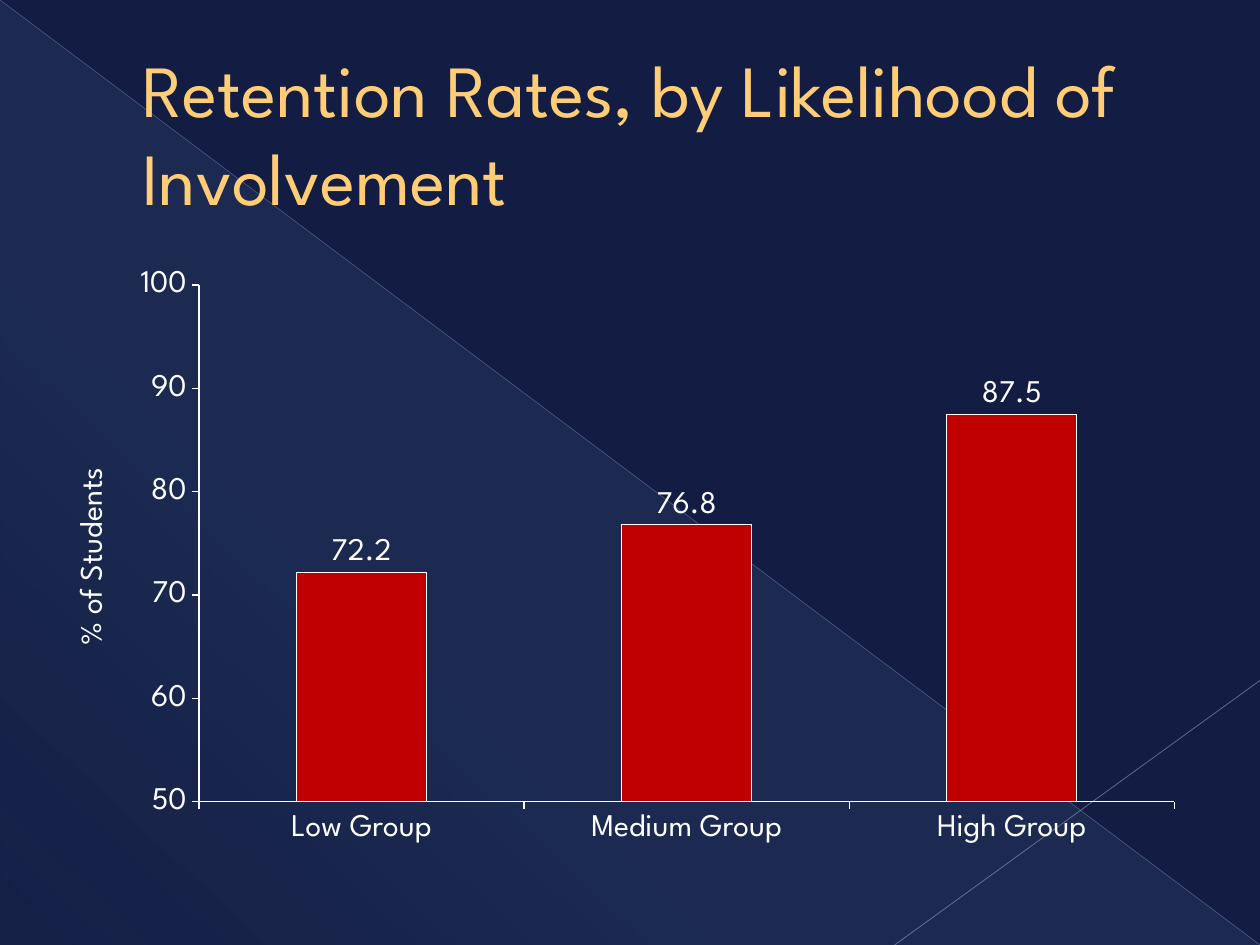
import pptx
import pptx.chart.data
import pptx.dml.color
import pptx.enum.chart
import pptx.enum.shapes
import pptx.enum.text
import pptx.oxml
import pptx.oxml.ns
import pptx.util
from dataclasses import dataclass


@dataclass(frozen=True)
class Theme:
    font: str = "League Spartan"
    background: str = "131D43"
    glow: str = "76B6F2"
    title: str = "FFCD75"
    text: str = "FFFFFF"
    bar: str = "C00000"
    title_size: int = 42
    chart_size: int = 18


theme = Theme()
namespace = pptx.oxml.ns.nsdecls("a", "c")
rgb = pptx.dml.color.RGBColor.from_string

deck = pptx.Presentation()
deck.slide_width = pptx.util.Inches(10)
deck.slide_height = pptx.util.Inches(7.5)
page = deck.slides.add_slide(deck.slide_layouts[6])
page.background.fill.solid()
page.background.fill.fore_color.rgb = rgb(theme.background)


def place(*shares):
    """Turn alternating shares of slide width and height into lengths."""
    sides = (deck.slide_width, deck.slide_height) * 2
    return [round(share * side) for share, side in zip(shares, sides)]


def write(frame, text, size, color, indent=0):
    para = frame.paragraphs[0]
    para._p.get_or_add_pPr().set("marL", str(pptx.util.Inches(indent)))
    span = para.add_run()
    span.text = text
    span.font.name = theme.font
    span.font.size = pptx.util.Pt(size)
    span.font.bold = False
    span.font.color.rgb = rgb(color)


# Background: a faint triangle and two thin diagonals
triangle = page.shapes.add_shape(
    pptx.enum.shapes.MSO_SHAPE.RIGHT_TRIANGLE, *place(0, 0, 1, 1))
triangle.shadow.inherit = False
triangle.line.fill.background()
triangle.fill.background()
stops = "".join(
    f'<a:gs pos="{position * 1000}"><a:srgbClr val="{theme.glow}">'
    f'<a:alpha val="{alpha * 1000}"/></a:srgbClr></a:gs>'
    for position, alpha in ((0, 10), (70, 8), (100, 1)))
gradient = pptx.oxml.parse_xml(
    f'<a:gradFill {namespace} rotWithShape="1"><a:gsLst>{stops}</a:gsLst>'
    f'<a:lin ang="{133 * 60000}" scaled="0"/></a:gradFill>')
no_fill = triangle._element.spPr.find(pptx.oxml.ns.qn("a:noFill"))
no_fill.getparent().replace(no_fill, gradient)

diagonals = (
    ((0, 0, 1, 1), "ACB0D2", 0.39, 35),
    ((1, 0.72, 0.71, 1), "B5B9D7", 0.47, 45),
)
for ends, color, width, alpha in diagonals:
    diagonal = page.shapes.add_connector(
        pptx.enum.shapes.MSO_CONNECTOR.STRAIGHT, *place(*ends))
    diagonal.line.width = pptx.util.Pt(width)
    diagonal.line.color.rgb = rgb(color)
    tint = diagonal._element.spPr.find(".//" + pptx.oxml.ns.qn("a:srgbClr"))
    tint.append(pptx.oxml.parse_xml(f'<a:alpha {namespace} val="{alpha * 1000}"/>'))
    diagonal._element.spPr.append(pptx.oxml.parse_xml(f"<a:effectLst {namespace}/>"))

# Title
title = page.shapes.add_textbox(*place(0.05, 0.04, 0.9, 0.2)).text_frame
title.word_wrap = True
title.vertical_anchor = pptx.enum.text.MSO_ANCHOR.MIDDLE
write(title, "Retention Rates, by Likelihood of Involvement",
      size=theme.title_size, color=theme.title, indent=0.53)

# Chart
rates = pptx.chart.data.CategoryChartData()
rates.categories = ["Low Group", "Medium Group", "High Group"]
rates.add_series("Series 1", [72.2, 76.8, 87.5])
chart = page.shapes.add_chart(
    pptx.enum.chart.XL_CHART_TYPE.COLUMN_CLUSTERED,
    *place(0.05, 0.275, 0.9, 0.667), rates).chart
chart.has_legend = False
chart.has_title = False
chart.font.name = theme.font
chart.font.size = pptx.util.Pt(theme.chart_size)
chart.font.color.rgb = rgb(theme.text)

for axis in (chart.category_axis, chart.value_axis):
    axis.has_major_gridlines = False
    axis.major_tick_mark = pptx.enum.chart.XL_TICK_MARK.OUTSIDE
    axis.format.line.color.rgb = rgb(theme.text)
    axis.format.line.width = pptx.util.Pt(0.75)
students = chart.value_axis
students.minimum_scale, students.maximum_scale, students.major_unit = 50, 100, 10
write(students.axis_title.text_frame, "% of Students",
      size=theme.chart_size, color=theme.text)
students.axis_title.text_frame._txBody.bodyPr.set("rot", str(-90 * 60000))

plot = chart.plots[0]
plot.gap_width = 150
plot.vary_by_categories = False
plot.has_data_labels = True
plot.data_labels.show_value = True
plot.data_labels.position = pptx.enum.chart.XL_LABEL_POSITION.OUTSIDE_END
bars = plot.series[0]
bars.format.fill.solid()
bars.format.fill.fore_color.rgb = rgb(theme.bar)
bars.format.line.color.rgb = rgb(theme.text)
bars.format.line.width = pptx.util.Pt(0.75)

area = chart._chartSpace.chart.plotArea
for old in area.findall(pptx.oxml.ns.qn("c:layout")):
    area.remove(old)
bounds = "".join(
    f'<c:{side} val="{share}"/>'
    for side, share in (("xMode", "edge"), ("yMode", "edge"), ("x", 0.12),
                        ("y", 0.04), ("w", 0.86), ("h", 0.82)))
area.insert(0, pptx.oxml.parse_xml(
    f'<c:layout {namespace}><c:manualLayout><c:layoutTarget val="inner"/>'
    f"{bounds}</c:manualLayout></c:layout>"))

deck.save("out.pptx")
